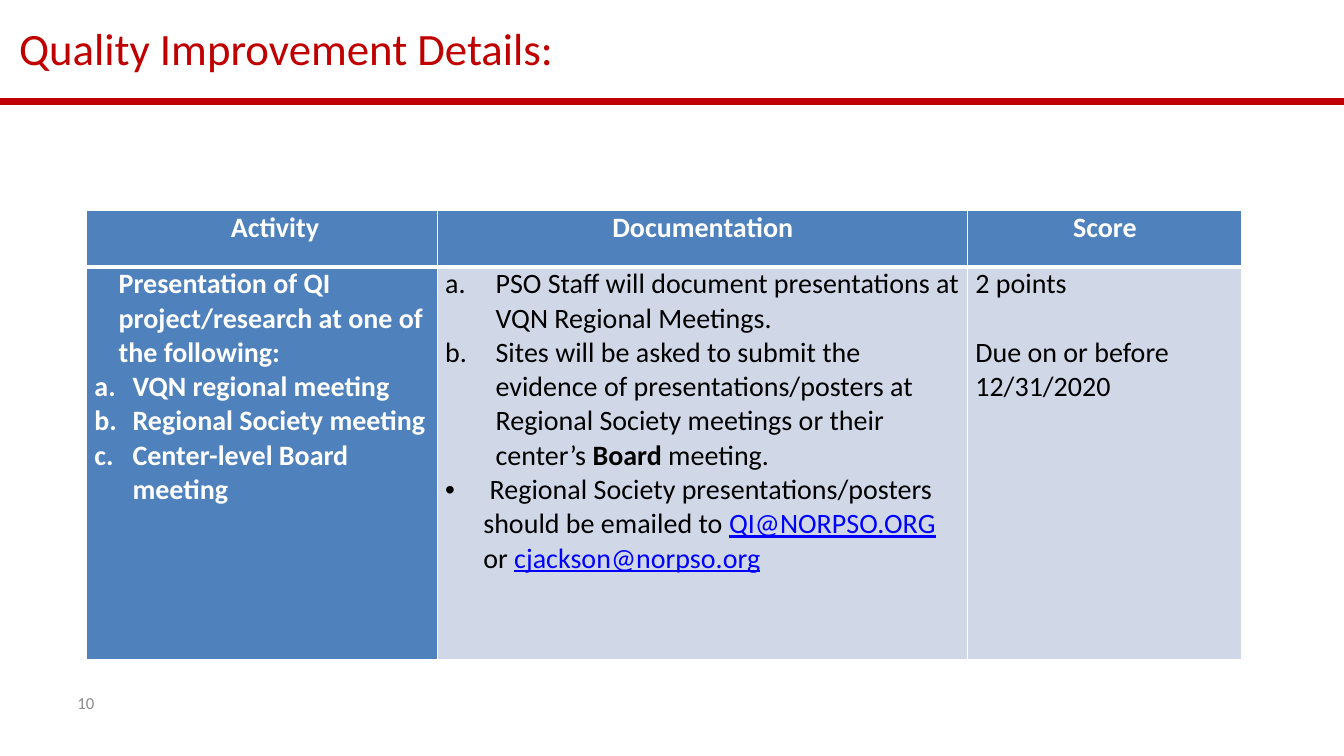
"""Build the quality improvement details slide."""
from dataclasses import dataclass

from lxml import etree
from pptx import Presentation
from pptx.dml.color import RGBColor
from pptx.enum.shapes import MSO_CONNECTOR
from pptx.enum.text import MSO_ANCHOR, PP_ALIGN
from pptx.oxml.ns import qn
from pptx.util import Cm, Pt

STRAIGHT = MSO_CONNECTOR.STRAIGHT
MIDDLE = MSO_ANCHOR.MIDDLE
LEFT, CENTER = PP_ALIGN.LEFT, PP_ALIGN.CENTER


@dataclass(frozen=True)
class Theme:
    font: str = "Calibri"
    title_size: int = 32
    table_size: int = 20
    number_size: int = 12
    red: str = "C00000"
    blue: str = "4F81BD"
    pale: str = "D0D8E8"
    white: str = "FFFFFF"
    black: str = "000000"
    link: str = "0000FF"
    gray: str = "8C8C8C"


THEME = Theme()


@dataclass(frozen=True)
class Span:
    text: str
    bold: bool = False
    link: bool = False


@dataclass(frozen=True)
class Para:
    spans: tuple[Span, ...]
    bullet: str = ""
    margin: float = 0
    align: PP_ALIGN = LEFT
    before: float = 0


@dataclass(frozen=True)
class TableCell:
    paras: tuple[Para, ...]
    fill: str
    color: str


@dataclass(frozen=True)
class Label:
    text: str
    left: float
    top: float
    width: float
    height: float
    size: int
    color: str


LABELS = (
    Label("Quality Improvement Details:", 0.23, 0.25, 24.77, 1.88, THEME.title_size, THEME.red),
    Label("10", 1.7, 17.2, 7.62, 1.02, THEME.number_size, THEME.gray),
)
COLUMN_WIDTHS = (8.84, 13.36, 6.91)
ROW_HEIGHTS = (1.42, 9.88)
EDGE_WIDTH, HEADER_RULE_WIDTH = 1, 3


def header(text: str, margin: float = 0) -> TableCell:
    """Describe a centred heading cell."""
    return TableCell((Para((Span(text, bold=True),), margin=margin, align=CENTER),), THEME.blue, THEME.white)


def bold_item(text: str) -> Para:
    """Describe a bold lettered item."""
    return Para((Span(text, bold=True),), "letter", 0.96)


ACTIVITY = TableCell((
    Para((Span("Presentation of QI project/research at one of the following:", bold=True),), margin=0.61),
    bold_item("VQN regional meeting"),
    bold_item("Regional Society meeting"),
    bold_item("Center-level Board meeting"),
), THEME.blue, THEME.white)
DOCUMENTATION = TableCell((
    Para((Span("PSO Staff will document presentations at VQN Regional Meetings."),), "letter", 1.27),
    Para((
        Span("Sites will be asked to submit the evidence of presentations/posters at "
             "Regional Society meetings or their center’s "),
        Span("Board", bold=True),
        Span(" meeting."),
    ), "letter", 1.27),
    Para((
        Span(" Regional Society presentations/posters should be emailed to "),
        Span("QI@NORPSO.ORG", link=True),
        Span(" or "),
        Span("cjackson@norpso.org", link=True),
    ), "dot", 0.96),
), THEME.pale, THEME.black)
SCORE = TableCell((
    Para((Span("2 points"),)),
    Para((Span("Due on or before 12/31/2020"),), before=24.4),
), THEME.pale, THEME.black)
ROWS = (
    (header("Activity", 0.64), header("Documentation"), header("Score")),
    (ACTIVITY, DOCUMENTATION, SCORE),
)


def style_font(font, size: int, color: str) -> None:
    """Apply the theme font with a size and colour."""
    font.name = THEME.font
    font.size = Pt(size)
    font.color.rgb = RGBColor.from_string(color)


def add_label(slide, label: Label) -> None:
    """Add a single-line text box."""
    box = slide.shapes.add_textbox(Cm(label.left), Cm(label.top), Cm(label.width), Cm(label.height))
    frame = box.text_frame
    frame.word_wrap = True
    frame.vertical_anchor = MIDDLE
    frame.text = label.text
    style_font(frame.paragraphs[0].runs[0].font, label.size, label.color)


def add_rule(slide, width: int) -> None:
    """Draw the red rule under the title."""
    rule = slide.shapes.add_connector(STRAIGHT, 0, Cm(2.57), width, Cm(2.57))
    rule.line.color.rgb = RGBColor.from_string(THEME.red)
    rule.line.width = Pt(5)
    etree.SubElement(rule._element.spPr, qn("a:effectLst"))


def write_paragraph(paragraph, para: Para, color: str) -> None:
    """Write a paragraph with its bullet, indent and spans."""
    properties = paragraph._p.get_or_add_pPr()
    properties.set("marL", str(Cm(para.margin)))
    properties.set("indent", str(-Cm(para.margin) if para.bullet else 0))
    if para.bullet == "letter":
        etree.SubElement(properties, qn("a:buFont"), typeface="+mj-lt")
        etree.SubElement(properties, qn("a:buAutoNum"), type="alphaLcPeriod")
    elif para.bullet == "dot":
        etree.SubElement(properties, qn("a:buFont"), typeface="Arial")
        etree.SubElement(properties, qn("a:buChar"), char="•")
    paragraph.alignment = para.align
    paragraph.space_before = Pt(para.before)
    for span in para.spans:
        run = paragraph.add_run()
        run.text = span.text
        style_font(run.font, THEME.table_size, THEME.link if span.link else color)
        run.font.bold = span.bold
        run.font.underline = span.link


def set_borders(cell, top: float, bottom: float) -> None:
    """Give a cell white borders."""
    properties = cell._tc.get_or_add_tcPr()
    widths = {"lnL": EDGE_WIDTH, "lnR": EDGE_WIDTH, "lnT": top, "lnB": bottom}
    for position, (side, width) in enumerate(widths.items()):
        line = etree.Element(qn(f"a:{side}"), w=str(Pt(width)))
        fill = etree.SubElement(line, qn("a:solidFill"))
        etree.SubElement(fill, qn("a:srgbClr"), val=THEME.white)
        properties.insert(position, line)


def fill_cell(cell, content: TableCell) -> None:
    """Set a cell's fill, margins and text."""
    cell.fill.solid()
    cell.fill.fore_color.rgb = RGBColor.from_string(content.fill)
    cell.margin_left = cell.margin_right = Cm(0.19)
    cell.margin_top = cell.margin_bottom = 0
    frame = cell.text_frame
    for index, para in enumerate(content.paras):
        paragraph = frame.add_paragraph() if index else frame.paragraphs[0]
        write_paragraph(paragraph, para, content.color)


def add_activity_table(slide) -> None:
    """Add the activity, documentation and score table."""
    table = slide.shapes.add_table(
        len(ROWS), len(COLUMN_WIDTHS), Cm(2.19), Cm(5.31),
        Cm(sum(COLUMN_WIDTHS)), Cm(sum(ROW_HEIGHTS))).table
    for column, width in zip(table.columns, COLUMN_WIDTHS):
        column.width = Cm(width)
    for row_index, contents in enumerate(ROWS):
        table.rows[row_index].height = Cm(ROW_HEIGHTS[row_index])
        top = HEADER_RULE_WIDTH if row_index else EDGE_WIDTH
        bottom = EDGE_WIDTH if row_index else HEADER_RULE_WIDTH
        for column_index, content in enumerate(contents):
            cell = table.cell(row_index, column_index)
            fill_cell(cell, content)
            set_borders(cell, top, bottom)


def main() -> None:
    """Build and save the deck."""
    deck = Presentation()
    deck.slide_width, deck.slide_height = Cm(33.87), Cm(19.05)
    page = deck.slides.add_slide(deck.slide_layouts[6])
    add_rule(page, deck.slide_width)
    add_activity_table(page)
    for label in LABELS:
        add_label(page, label)
    deck.save("out.pptx")


if __name__ == "__main__":
    main()
